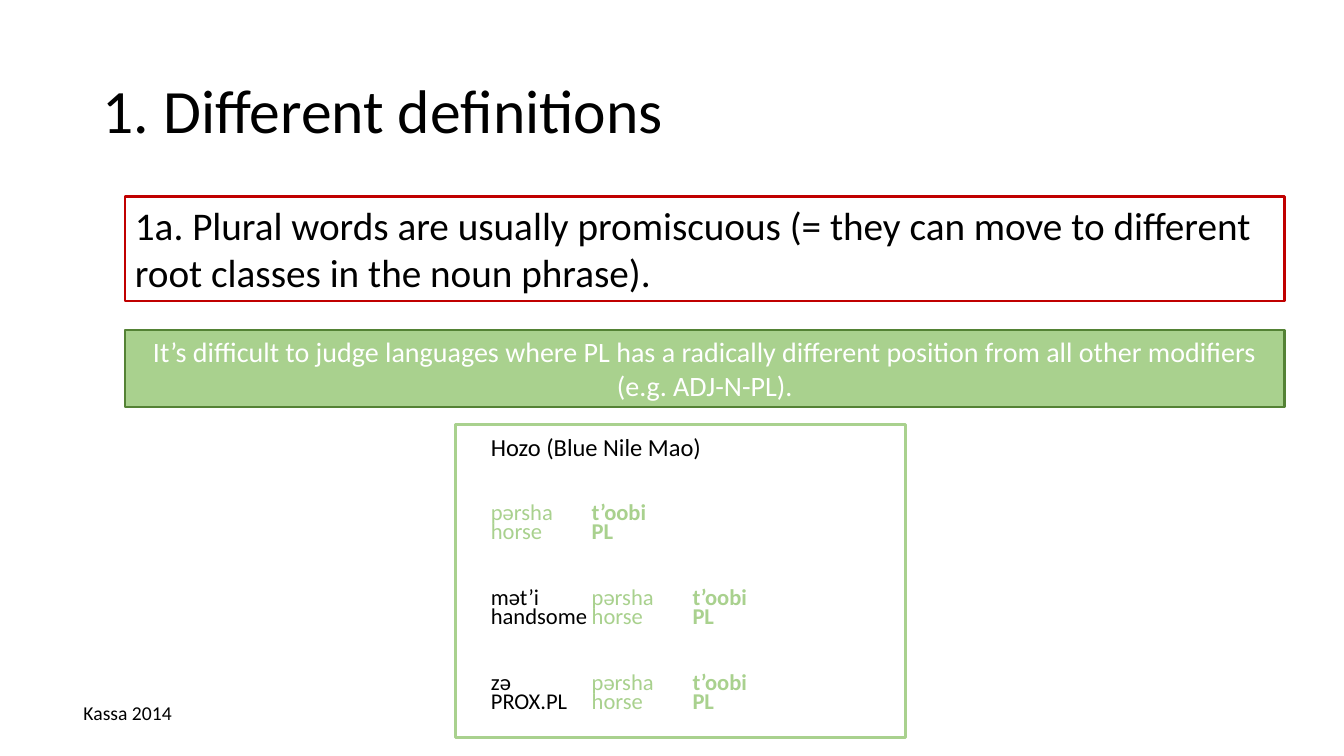
from lxml import etree
from pptx import Presentation
from pptx.dml.color import RGBColor
from pptx.enum.shapes import MSO_SHAPE
from pptx.enum.text import MSO_ANCHOR, PP_ALIGN
from pptx.oxml.ns import qn
from pptx.util import Inches, Pt

RECT = MSO_SHAPE.RECTANGLE
TOP, MIDDLE = MSO_ANCHOR.TOP, MSO_ANCHOR.MIDDLE
LEFT, CENTER = PP_ALIGN.LEFT, PP_ALIGN.CENTER
BLACK = RGBColor(0x00, 0x00, 0x00)
WHITE = RGBColor(0xFF, 0xFF, 0xFF)
RED = RGBColor(0xC0, 0x00, 0x00)
GREEN = RGBColor(0xA9, 0xD1, 0x8E)
DARK_GREEN = RGBColor(0x54, 0x82, 0x35)

PLURAL_HORSE = [("pərsha", "horse", GREEN, False), ("t’oobi", "PL", GREEN, True)]
EXAMPLES = [
    PLURAL_HORSE,
    [("mət’i", "handsome", BLACK, False)] + PLURAL_HORSE,
    [("zə", "PROX.PL", BLACK, False)] + PLURAL_HORSE,
]


class SlideBuilder:
    """Adds styled elements to one slide."""

    font = "Calibri"
    column = 1

    def __init__(self, slide):
        self.slide = slide

    def style(self, p, size, color=BLACK, align=LEFT):
        p.alignment = align
        p.font.name = self.font
        p.font.size = Pt(size)
        p.font.color.rgb = color

    def tabs(self, p, count):
        tab_list = etree.Element(qn("a:tabLst"))
        for i in range(1, count + 1):
            etree.SubElement(tab_list, qn("a:tab"),
                             pos=str(Inches(i * self.column)), algn="l")
        p._p.get_or_add_pPr().find(qn("a:defRPr")).addprevious(tab_list)

    def text(self, box, text, size, anchor=TOP, line_spacing=1.0):
        sp = self.slide.shapes.add_textbox(*map(Inches, box))
        tf = sp.text_frame
        tf.word_wrap = True
        tf.vertical_anchor = anchor
        p = tf.paragraphs[0]
        p.text = text
        p.line_spacing = line_spacing
        self.style(p, size)
        return tf

    def rect(self, box, line, width, fill=None):
        sp = self.slide.shapes.add_shape(RECT, *map(Inches, box))
        sp.shadow.inherit = False
        if fill is None:
            sp.fill.background()
        else:
            sp.fill.solid()
            sp.fill.fore_color.rgb = fill
        sp.line.color.rgb = line
        sp.line.width = Pt(width)
        return sp

    def banner(self, box, text, size, line, color=BLACK, fill=None, align=LEFT):
        tf = self.rect(box, line, 1.5, fill).text_frame
        tf.word_wrap = True
        tf.vertical_anchor = TOP
        p = tf.paragraphs[0]
        p.text = text
        self.style(p, size, color, align)

    def gloss(self, tf, words, space_before):
        p = tf.add_paragraph()
        p.line_spacing = 0.7
        p.space_before = Pt(space_before)
        self.style(p, 16.1)
        self.tabs(p, len(words) - 1)
        for row in range(2):
            if row:
                p.add_line_break()
            for i, word in enumerate(words):
                r = p.add_run()
                r.text = word[row] + ("\t" if i < len(words) - 1 else "")
                r.font.color.rgb, r.font.bold = word[2:]


def main():
    prs = Presentation()
    prs.slide_width, prs.slide_height = Inches(13.33), Inches(7.5)
    s = SlideBuilder(prs.slides.add_slide(prs.slide_layouts[6]))

    s.text((0.92, 0.4, 11.5, 1.45), "1. Different definitions", 44, MIDDLE, 0.9)
    s.banner((1.24, 3.27, 11.5, 0.77),
             "It’s difficult to judge languages where PL has a radically different "
             "position from all other modifiers (e.g. ADJ-N-PL).",
             20, DARK_GREEN, WHITE, GREEN, CENTER)
    s.banner((1.24, 1.95, 11.5, 1.04),
             "1a. Plural words are usually promiscuous (= they can move to different "
             "root classes in the noun phrase).", 28, RED)

    tf = s.text((4.77, 4.32, 3.95, 2.92), "Hozo (Blue Nile Mao)", 17.5,
                line_spacing=0.7)
    tf.paragraphs[0].space_before = Pt(10)
    for i, words in enumerate(EXAMPLES):
        s.gloss(tf, words, 33.5 if i else 32)
    s.rect((4.52, 4.21, 4.46, 3.11), GREEN, 2.25)
    s.text((0.73, 6.9, 11.87, 0.34), "Kassa 2014", 14)

    prs.save("out.pptx")


if __name__ == "__main__":
    main()
